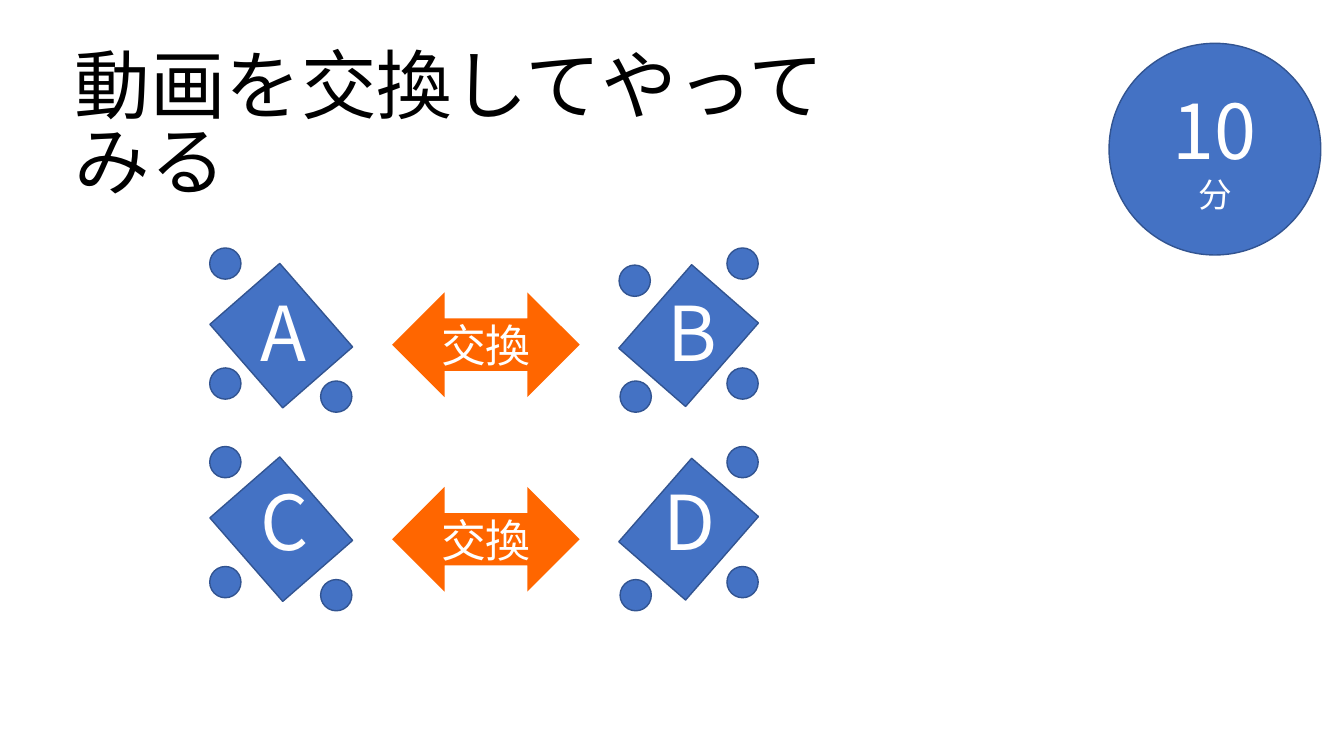
from pptx import Presentation
from pptx.util import Inches, Pt
from pptx.dml.color import RGBColor
from pptx.enum.shapes import MSO_SHAPE as Kind
from pptx.enum.text import PP_ALIGN as Align, MSO_ANCHOR as Anchor
from lxml import etree

# Content
TITLE = "動画を交換してやってみる"
SWAP = "交換"
TIME = ("10", "分")
TEAMS = [("A", "B"), ("C", "D")]

# Look
FONT = "Noto Sans CJK JP"
BLUE, EDGE, ORANGE = "4472C4", "325491", "FF6600"
WHITE, BLACK = "FFFFFF", "000000"
TIGHT = 0.84

# Grid: tops of the two rows, then one set of places per column
DESK_TOPS, DOT_TOPS = (2.78, 4.7), (2.46, 4.43)
SWAP_TOPS, NAME_TOPS = (2.9, 4.83), (2.93, 4.81)
DOT, DROPS = 0.31, (0, 1.19, 1.32)
SIDES = [
    # desk left, desk width, turn, dot lefts, name lefts by row
    (2.33, 0.92, 318.9, (2.08, 2.08, 3.18), (2.49, 2.49)),
    (6.39, 0.88, 41.1, (7.21, 7.21, 6.15), (6.52, 6.48)),
]

prs = Presentation()
prs.slide_width, prs.slide_height = Inches(13.33), Inches(7.5)
slide = prs.slides.add_slide(prs.slide_layouts[6])


def color(code):
    return RGBColor.from_string(code)


def style(run, size, code):
    run.font.size = Pt(size)
    run.font.name = FONT
    run.font.color.rgb = color(code)
    props = run._r.get_or_add_rPr()
    tag = props.find("{*}latin").tag.replace("latin", "ea")
    east = etree.Element(tag, typeface=FONT)
    props.find("{*}latin").addnext(east)


def shape(kind, x, y, w, h, fill=BLUE, edge=EDGE):
    item = slide.shapes.add_shape(kind, *map(Inches, (x, y, w, h)))
    item.shadow.inherit = False
    item.fill.solid()
    item.fill.fore_color.rgb = color(fill)
    if edge:
        item.line.color.rgb = color(edge)
        item.line.width = Pt(1)
    else:
        item.line.fill.background()
    return item


def label(item, text, *sizes):
    frame = item.text_frame
    frame.vertical_anchor = Anchor.MIDDLE
    para = frame.paragraphs[0]
    para.text = text
    para.alignment = Align.CENTER
    for run, size in zip(para.runs, sizes):
        style(run, size, WHITE)


def words(text, x, y, w, code, wrap):
    frame = slide.shapes.add_textbox(*map(Inches, (x, y, w, 1.01))).text_frame
    frame.word_wrap = wrap
    frame.text = text
    para = frame.paragraphs[0]
    para.line_spacing = TIGHT
    style(para.runs[0], 54, code)


# Desks, seats and team names
for row, names in enumerate(TEAMS):
    for name, (left, width, turn, dots, spots) in zip(names, SIDES):
        desk = shape(Kind.RECTANGLE, left, DESK_TOPS[row], width, 1.1)
        desk.rotation = turn
        for x, drop in zip(dots, DROPS):
            shape(Kind.OVAL, x, DOT_TOPS[row] + drop, DOT, DOT)
        words(name, spots[row], NAME_TOPS[row], 0.71, WHITE, False)

    # Swap arrow
    arrow = shape(Kind.LEFT_RIGHT_ARROW, 3.89, SWAP_TOPS[row], 1.86, 1.04, ORANGE, None)
    label(arrow, SWAP, 32)

# Extra seat at desk B
shape(Kind.OVAL, 6.14, 2.63, DOT, DOT)

# Title and timer
words(TITLE, 0.64, 0.47, 8.09, BLACK, True)
timer = shape(Kind.OVAL, 11, 0.43, 2.1, 2.1)
label(timer, "\v".join(TIME), 54, 24)

prs.save("out.pptx")
